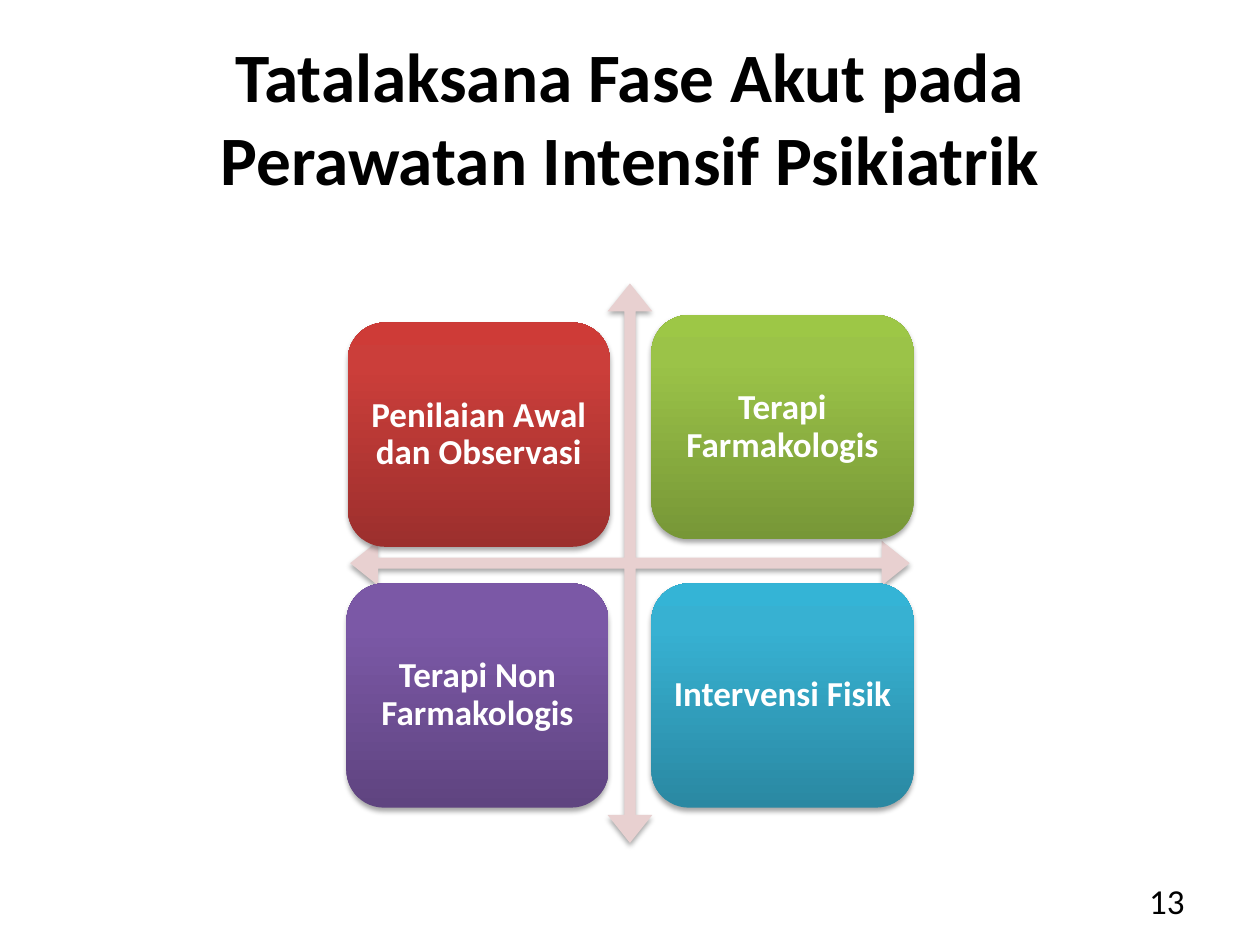
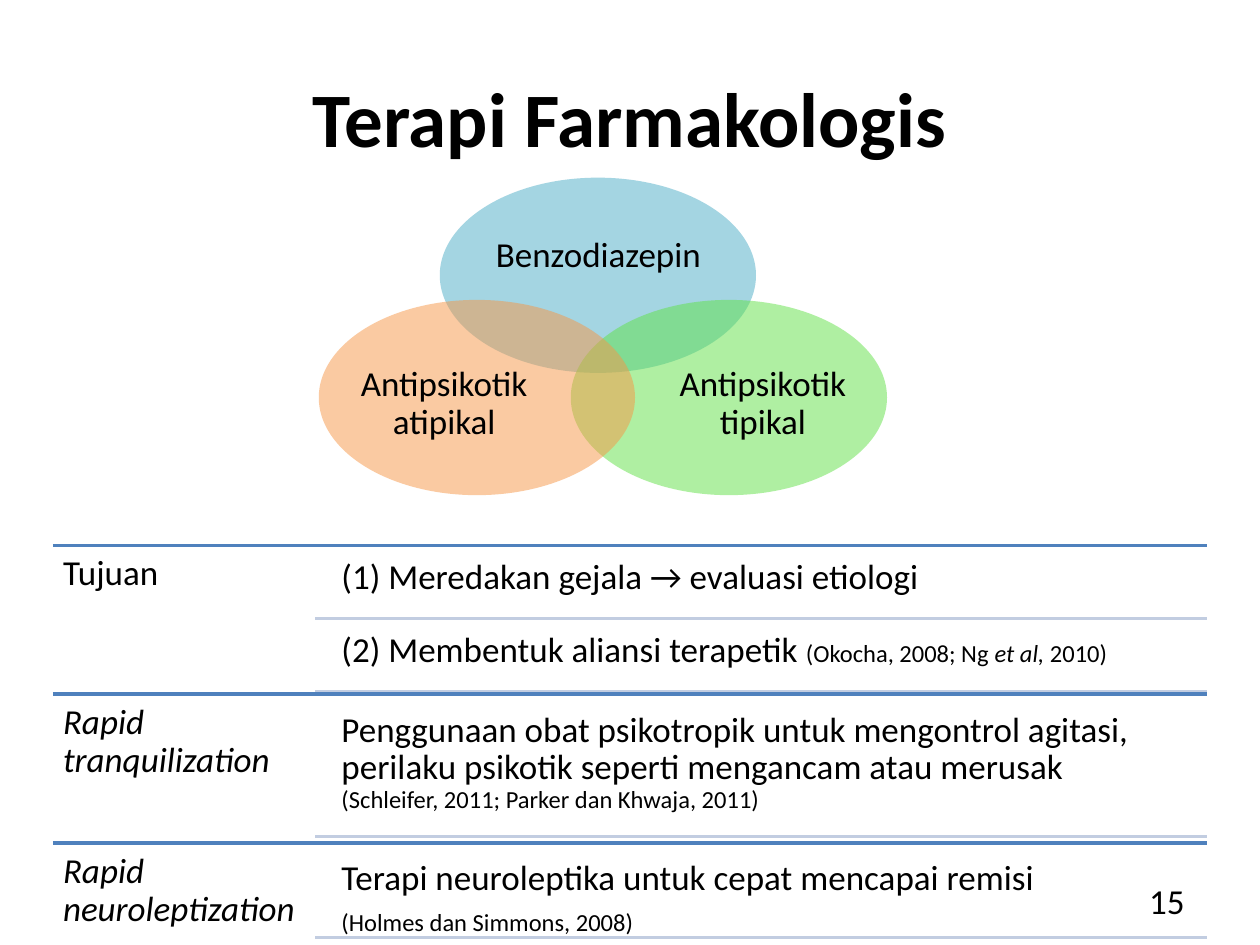
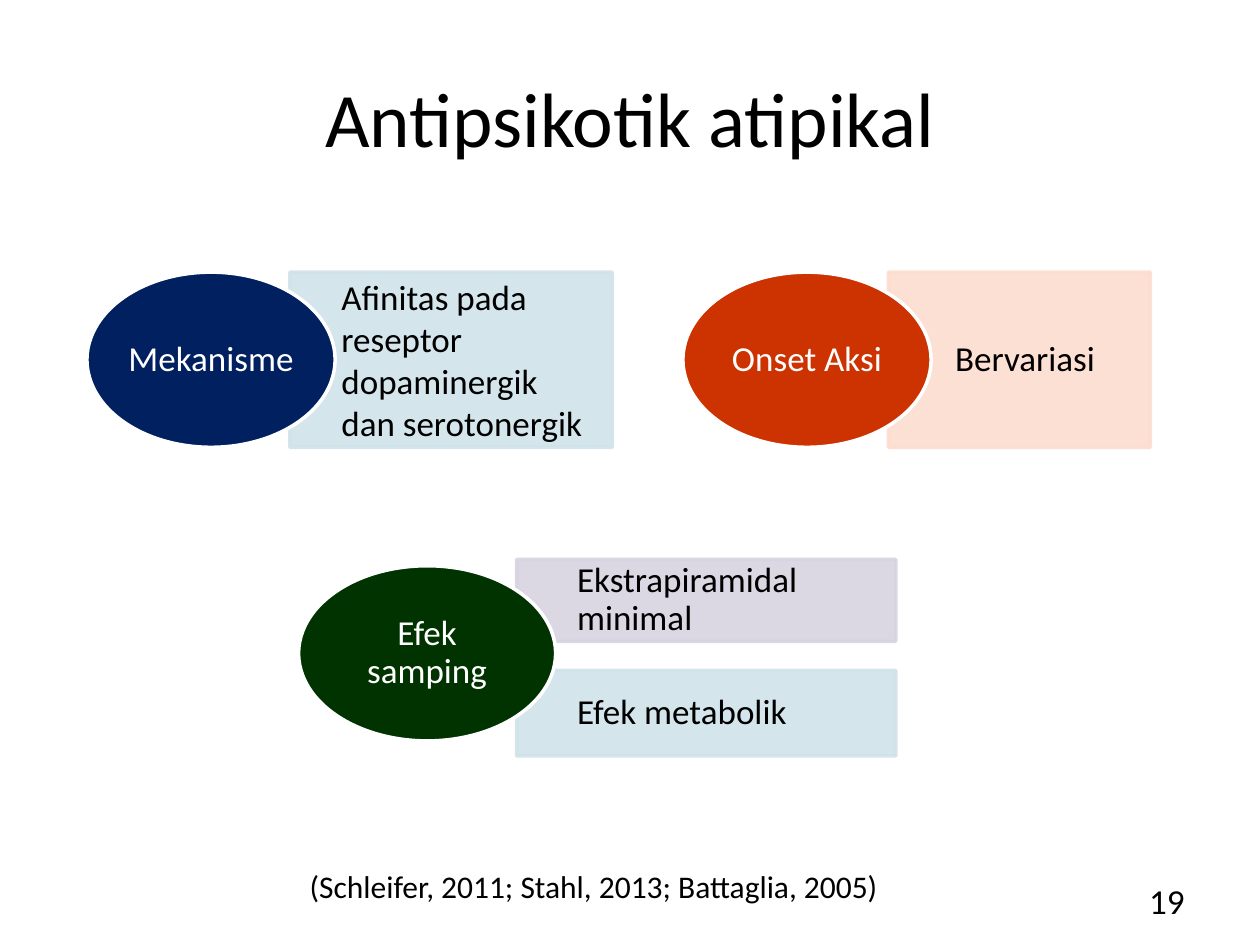
from dataclasses import dataclass
from typing import NamedTuple

import lxml.etree
import pptx
import pptx.dml.color
import pptx.enum.shapes
import pptx.enum.text
import pptx.oxml.ns
import pptx.util

Inches, Pt = pptx.util.Inches, pptx.util.Pt
RGB = pptx.dml.color.RGBColor.from_string
qn = pptx.oxml.ns.qn
ALIGN = pptx.enum.text.PP_ALIGN
ANCHOR = pptx.enum.text.MSO_ANCHOR
SHAPE = pptx.enum.shapes.MSO_SHAPE


@dataclass(frozen=True)
class Theme:
    font: str = "Calibri"
    title: float = 44
    long_title: float = 39.6
    body: float = 20
    citation: float = 18
    small: float = 14
    text: str = "000000"
    white: str = "FFFFFF"
    arrow: str = "E8D0D0"
    row_line: str = "4F81BD"
    entry_line: str = "C2CDE1"
    aqua: str = "4BACC6"
    lime: str = "60E146"
    orange: str = "F79646"
    navy: str = "002060"
    rust: str = "CC3300"
    forest: str = "003300"
    pale_blue: str = "D0E3EA"
    pale_peach: str = "FCDDCF"
    pale_violet: str = "D8D3E0"
    red_ramp: tuple = ("9C2F2D", "CB3E3A", "CE3B37")
    green_ramp: tuple = ("779737", "9BC348", "9DC746")
    violet_ramp: tuple = ("5F4480", "7B58A6", "7C57A8")
    teal_ramp: tuple = ("2A88A2", "37B1D2", "34B4D6")


T = Theme()


class Box(NamedTuple):
    left: float
    top: float
    width: float
    height: float


class Span(NamedTuple):
    text: str
    size: float = T.body
    italic: bool = False


class Style(NamedTuple):
    color: str = T.text
    bold: bool = False
    align: ALIGN = ALIGN.LEFT
    anchor: ANCHOR = ANCHOR.TOP
    insets: tuple = (0.08, 0.08, 0.08, 0.08)
    spacing: float = 0.9
    after: float = 0


class Card(NamedTuple):
    text: str
    left: float
    top: float
    ramp: tuple


class Circle(NamedTuple):
    text: str
    left: float
    top: float
    color: str
    label: Box


class Entry(NamedTuple):
    height: float
    paragraphs: list
    after: float = 0


class Row(NamedTuple):
    heading: Span
    gap: float
    entries: list


class Detail(NamedTuple):
    text: str
    box: Box
    color: str
    indent: float
    spacing: float = 0.9


class Topic(NamedTuple):
    text: str
    box: Box
    color: str
    details: list


CENTERED = Style(align=ALIGN.CENTER, anchor=ANCHOR.MIDDLE, insets=(0, 0, 0, 0))

CARD_SIZE = (2.08, 1.78)
CARDS = [
    Card("Penilaian Awal dan Observasi", 2.76, 2.56, T.red_ramp),
    Card("Terapi Farmakologis", 5.17, 2.5, T.green_ramp),
    Card("Terapi Non Farmakologis", 2.75, 4.63, T.violet_ramp),
    Card("Intervensi Fisik", 5.17, 4.63, T.teal_ramp),
]

CIRCLE_SIZE = (2.51, 1.55)
CIRCLES = [
    Circle("Benzodiazepin", 3.49, 1.41, T.aqua, Box(3.83, 1.68, 1.84, 0.7)),
    Circle("Antipsikotik tipikal", 4.53, 2.38, T.lime, Box(5.3, 2.78, 1.51, 0.85)),
    Circle("Antipsikotik atipikal", 2.53, 2.38, T.orange, Box(2.77, 2.78, 1.51, 0.85)),
]

ROWS_TOP, ROW_PITCH = 4.33, 1.18
ROW_LEFT, ENTRY_LEFT, ROW_RIGHT = 0.42, 2.5, 9.58
ENTRY_INDENT = 0.13
ROWS = [
    Row(Span("Tujuan"), 0.03, [
        Entry(0.55, [[Span("(1) Meredakan gejala → evaluasi etiologi")]]),
        Entry(0.55, [[Span("(2) Membentuk aliansi terapetik "),
                      Span("(Okocha, 2008; Ng ", T.small),
                      Span("et al, ", T.small, True),
                      Span("2010)", T.small)]]),
    ]),
    Row(Span("Rapid tranquilization", italic=True), 0.06, [
        Entry(1.07, [[Span("Penggunaan obat psikotropik untuk mengontrol agitasi, "
                           "perilaku psikotik seperti mengancam atau merusak")],
                     [Span("(Schleifer, 2011; Parker dan Khwaja, 2011)", T.small)]]),
    ]),
    Row(Span("Rapid neuroleptization", italic=True), 0.06, [
        Entry(0.69, [[Span("Terapi neuroleptika untuk cepat mencapai remisi")],
                     [Span("(Holmes dan Simmons, 2008)", T.small)]], after=7),
    ]),
]

TOPICS = [
    Topic("Mekanisme", Box(0.69, 2.16, 1.97, 1.39), T.navy, [
        Detail("Afinitas pada reseptor dopaminergik dan serotonergik",
               Box(2.3, 2.16, 2.56, 1.39), T.pale_blue, 0.41, 1),
    ]),
    Topic("Onset Aksi", Box(5.42, 2.16, 1.97, 1.39), T.rust, [
        Detail("Bervariasi", Box(7.05, 2.16, 2.08, 1.39), T.pale_peach, 0.53),
    ]),
    Topic("Efek samping", Box(2.37, 4.49, 2.04, 1.39), T.forest, [
        Detail("Ekstrapiramidal minimal", Box(4.1, 4.44, 3.01, 0.65), T.pale_violet, 0.48),
        Detail("Efek metabolik", Box(4.1, 5.32, 3.01, 0.68), T.pale_blue, 0.48),
    ]),
]


def format_run(r, size: float, color: str = T.text, bold: bool = False,
               italic: bool = False) -> None:
    r.font.name = T.font
    r.font.size = Pt(size)
    r.font.color.rgb = RGB(color)
    r.font.bold = bold
    r.font.italic = italic


def write(sp, paragraphs: list, style: Style) -> None:
    """Fill a shape with paragraphs, each a list of spans."""
    tf = sp.text_frame
    tf.word_wrap = True
    tf.vertical_anchor = style.anchor
    tf.margin_left, tf.margin_top, tf.margin_right, tf.margin_bottom = map(Inches, style.insets)
    for i, spans in enumerate(paragraphs):
        p = tf.add_paragraph() if i else tf.paragraphs[0]
        p.alignment = style.align
        p.line_spacing = style.spacing
        p.space_after = Pt(style.after)
        for span in spans:
            r = p.add_run()
            r.text = span.text
            format_run(r, span.size, style.color, style.bold, span.italic)


def add_text(s, box: Box, paragraphs: list, style: Style) -> None:
    write(s.shapes.add_textbox(*map(Inches, box)), paragraphs, style)


def add_solid(s, kind, box: Box, color: str, line: str = "", alpha: int = 100):
    """Add a shape; alpha is the opacity of fill and line in percent."""
    sp = s.shapes.add_shape(kind, *map(Inches, box))
    sp.shadow.inherit = False
    sp.fill.solid()
    sp.fill.fore_color.rgb = RGB(color)
    if line:
        sp.line.color.rgb = RGB(line)
        sp.line.width = Pt(2)
    else:
        sp.line.fill.background()
    if alpha < 100:
        for clr in sp._element.spPr.iter(qn("a:srgbClr")):
            lxml.etree.SubElement(clr, qn("a:alpha"), val=str(alpha * 1000))
    return sp


def cast_shadow(sp) -> None:
    effects = sp._element.spPr.find(qn("a:effectLst"))
    shadow = lxml.etree.SubElement(effects, qn("a:outerShdw"), blurRad=str(Pt(3.1)),
                                   dist=str(Pt(1.8)), dir="5400000", rotWithShape="0")
    clr = lxml.etree.SubElement(shadow, qn("a:srgbClr"), val="000000")
    lxml.etree.SubElement(clr, qn("a:alpha"), val="35000")


def fill_ramp(sp, ramp: tuple) -> None:
    """Fill from the bottom up with three colours."""
    sp.fill.gradient()
    sp.fill.gradient_angle = 90
    stops = sp._element.spPr.find(".//" + qn("a:gsLst"))
    for stop in list(stops):
        stops.remove(stop)
    for position, color in zip((0, 80, 100), ramp):
        stop = lxml.etree.SubElement(stops, qn("a:gs"), pos=str(position * 1000))
        lxml.etree.SubElement(stop, qn("a:srgbClr"), val=color)


def add_rule(s, left: float, y: float, color: str) -> None:
    cx = s.shapes.add_connector(pptx.enum.shapes.MSO_CONNECTOR.STRAIGHT,
                                Inches(left), Inches(y), Inches(ROW_RIGHT), Inches(y))
    cx.line.color.rgb = RGB(color)
    cx.line.width = Pt(2)
    lxml.etree.SubElement(cx._element.spPr, qn("a:effectLst"))


def add_slide(prs, title: str, number: str, size: float = T.title, bold: bool = True):
    s = prs.slides.add_slide(prs.slide_layouts[5])
    sp = s.shapes.title
    sp.left, sp.top, sp.width, sp.height = map(Inches, (0.5, 0.3, 9, 1.25))
    sp.text_frame.text = title
    sp.text_frame.vertical_anchor = ANCHOR.MIDDLE
    p = sp.text_frame.paragraphs[0]
    p.alignment = ALIGN.CENTER
    format_run(p.runs[0], size, bold=bold)
    add_text(s, Box(7.17, 6.95, 2.33, 0.4), [[Span(number)]],
             Style(align=ALIGN.RIGHT, anchor=ANCHOR.MIDDLE,
                   insets=(0.1, 0.05, 0.1, 0.05), spacing=1))
    return s


def add_matrix_slide(prs) -> None:
    s = add_slide(prs, "Tatalaksana Fase Akut pada Perawatan Intensif Psikiatrik", "13",
                  T.long_title)
    cross = add_solid(s, SHAPE.QUAD_ARROW, Box(2.78, 2.25, 4.44, 4.44), T.arrow)
    for i, value in enumerate((0.02, 0.04, 0.05)):
        cross.adjustments[i] = value
    cast_shadow(cross)
    style = Style(T.white, True, ALIGN.CENTER, ANCHOR.MIDDLE)
    for card in CARDS:
        sp = add_solid(s, SHAPE.ROUNDED_RECTANGLE, Box(card.left, card.top, *CARD_SIZE),
                       card.ramp[0])
        fill_ramp(sp, card.ramp)
        cast_shadow(sp)
        write(sp, [[Span(card.text)]], style)


def add_therapy_slide(prs) -> None:
    s = add_slide(prs, "Terapi Farmakologis", "15")
    for circle in CIRCLES:
        add_solid(s, SHAPE.OVAL, Box(circle.left, circle.top, *CIRCLE_SIZE), circle.color,
                  alpha=50)
        add_text(s, circle.label, [[Span(circle.text)]], CENTERED)
    for i, row in enumerate(ROWS):
        top = ROWS_TOP + i * ROW_PITCH
        add_rule(s, ROW_LEFT, top, T.row_line)
        y = top
        for entry in row.entries:
            y += row.gap
            left = ENTRY_LEFT + ENTRY_INDENT
            add_text(s, Box(left, y, ROW_RIGHT - left, entry.height), entry.paragraphs,
                     Style(after=entry.after))
            y += entry.height
            add_rule(s, ENTRY_LEFT, y, T.entry_line)
        add_text(s, Box(ROW_LEFT, top, ENTRY_LEFT - ROW_LEFT, y - top), [[row.heading]], Style())


def add_atypical_slide(prs) -> None:
    s = add_slide(prs, "Antipsikotik atipikal", "19", bold=False)
    for topic in TOPICS:
        for detail in topic.details:
            sp = add_solid(s, SHAPE.RECTANGLE, detail.box, detail.color, detail.color, 90)
            write(sp, [[Span(detail.text)]],
                  Style(anchor=ANCHOR.MIDDLE, insets=(detail.indent, 0, 0.16, 0),
                        spacing=detail.spacing))
        sp = add_solid(s, SHAPE.OVAL, topic.box, topic.color, T.white)
        write(sp, [[Span(topic.text)]], CENTERED._replace(color=T.white))
    add_text(s, Box(2.36, 6.83, 5, 0.4),
             [[Span("(Schleifer, 2011; Stahl, 2013; Battaglia, 2005)", T.citation)]],
             Style(insets=(0.1, 0.05, 0.1, 0.05), spacing=1))


def main() -> None:
    prs = pptx.Presentation()
    prs.slide_width, prs.slide_height = Inches(10), Inches(7.5)
    add_matrix_slide(prs)
    add_therapy_slide(prs)
    add_atypical_slide(prs)
    prs.save("out.pptx")


if __name__ == "__main__":
    main()
